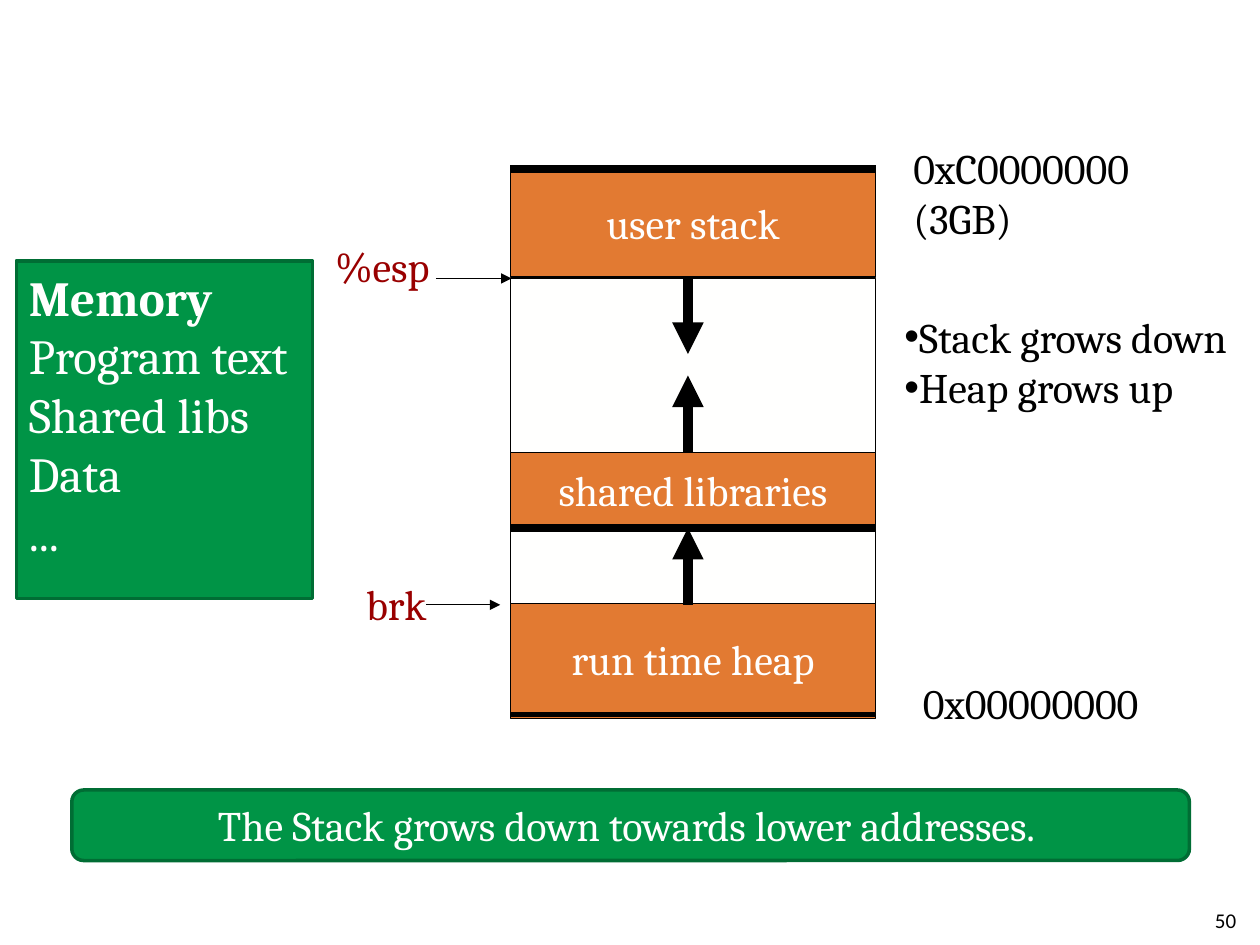
from dataclasses import dataclass

from lxml import etree
from pptx import Presentation
from pptx import util as u
from pptx.dml.color import RGBColor
from pptx.enum import shapes, text
from pptx.oxml.ns import qn

BLACK = RGBColor(0x00, 0x00, 0x00)
WHITE = RGBColor(0xFF, 0xFF, 0xFF)
OFF_WHITE = RGBColor(0xFF, 0xFF, 0xFE)
ORANGE = RGBColor(0xE2, 0x7A, 0x32)
GREEN = RGBColor(0x00, 0x94, 0x46)
DARK_GREEN = RGBColor(0x00, 0x6D, 0x34)
RED = RGBColor(0x99, 0x00, 0x00)

LEFT, CENTER, RIGHT = text.PP_ALIGN.LEFT, text.PP_ALIGN.CENTER, text.PP_ALIGN.RIGHT
TOP, MIDDLE = text.MSO_ANCHOR.TOP, text.MSO_ANCHOR.MIDDLE
RECT, ROUND = shapes.MSO_SHAPE.RECTANGLE, shapes.MSO_SHAPE.ROUNDED_RECTANGLE

# Memory column: edges and the axis of the growth arrows
COL_X, COL_W, AXIS_X = 4.05, 2.9, 5.46
STACK_TOP, STACK_END, LIBS_TOP, LIBS_END, BREAK = 1.34, 2.21, 3.59, 4.19, 4.8


@dataclass
class Box:
    x: float
    y: float
    w: float
    h: float


@dataclass
class Region:
    top: float
    height: float
    fill: RGBColor
    label: str = ""


@dataclass
class Line:
    x1: float
    y1: float
    x2: float
    y2: float
    width: float
    arrow: bool = False


@dataclass
class Label:
    box: Box
    lines: list[str]
    color: RGBColor = BLACK
    align: text.PP_ALIGN = LEFT
    anchor: text.MSO_ANCHOR = TOP
    size: float = 24
    font: str = "Cambria"
    bullet: str = ""


def write(p, words: str, size: float, color: RGBColor, align=LEFT,
          font: str = "Cambria", bold: bool = False) -> None:
    p.alignment = align
    for i, part in enumerate(words.split("\n")):
        if i:
            p.add_line_break()
        r = p.add_run()
        r.text = part
        r.font.name, r.font.size, r.font.bold = font, u.Pt(size), bold
        r.font.color.rgb = color


def paragraph(tf, index: int):
    return tf.add_paragraph() if index else tf.paragraphs[0]


def place(box: Box) -> list[u.Length]:
    return [u.Inches(v) for v in (box.x, box.y, box.w, box.h)]


def add_box(s, kind, box: Box, fill: RGBColor, line: RGBColor, width: float,
            anchor=MIDDLE, wrap: bool = False):
    sp = s.shapes.add_shape(kind, *place(box))
    sp.shadow.inherit = False
    sp.fill.solid()
    sp.fill.fore_color.rgb = fill
    sp.line.color.rgb = line
    sp.line.width = u.Pt(width)
    sp.text_frame.word_wrap = wrap
    sp.text_frame.vertical_anchor = anchor
    return sp


def add_region(s, region: Region) -> None:
    box = Box(COL_X, region.top, COL_W, region.height)
    sp = add_box(s, RECT, box, region.fill, BLACK, 0.75)
    if region.label:
        write(sp.text_frame.paragraphs[0], region.label, 24, WHITE, CENTER)


def add_line(s, line: Line) -> None:
    ends = [u.Inches(v) for v in (line.x1, line.y1, line.x2, line.y2)]
    c = s.shapes.add_connector(shapes.MSO_CONNECTOR.STRAIGHT, *ends)
    c.line.color.rgb = BLACK
    c.line.width = u.Pt(line.width)
    if line.arrow:
        etree.SubElement(c.line._get_or_add_ln(), qn("a:tailEnd"), type="triangle")
    etree.SubElement(c._element.spPr, qn("a:effectLst"))


def add_label(s, label: Label) -> None:
    tf = s.shapes.add_textbox(*place(label.box)).text_frame
    tf.word_wrap = True
    tf.vertical_anchor = label.anchor
    for i, words in enumerate(label.lines):
        p = paragraph(tf, i)
        write(p, words, label.size, label.color, label.align, label.font)
        if label.bullet:
            pPr = p._p.get_or_add_pPr()
            etree.SubElement(pPr, qn("a:buFont"), typeface="Arial")
            etree.SubElement(pPr, qn("a:buChar"), char=label.bullet)


REGIONS = [
    Region(4.75, 0.95, ORANGE, "run time heap"),
    Region(LIBS_TOP, LIBS_END - LIBS_TOP, ORANGE, "shared libraries"),
    Region(STACK_TOP, 0.86, ORANGE, "user stack"),
    Region(LIBS_END, 0.6, OFF_WHITE),
    Region(STACK_END, LIBS_TOP - STACK_END, OFF_WHITE),
]

LINES = [
    # Growth directions
    Line(AXIS_X, BREAK, AXIS_X, LIBS_END, 6, True),
    Line(AXIS_X, LIBS_TOP, AXIS_X, 2.98, 6, True),
    Line(AXIS_X, STACK_END, AXIS_X, 2.81, 6, True),
    # Pointers
    Line(3.46, STACK_END, 4.06, STACK_END, 0.75, True),
    Line(3.38, BREAK, 3.97, BREAK, 0.75, True),
    # Heavy boundaries
    Line(COL_X, 5.67, COL_X + COL_W, 5.67, 3),
    Line(COL_X, LIBS_END, COL_X + COL_W, LIBS_END, 4.5),
    Line(COL_X, STACK_TOP, COL_X + COL_W, STACK_TOP, 4.5),
]

LABELS = [
    Label(Box(7.08, 5.33, 2.2, 0.5), ["0x00000000"], align=CENTER),
    Label(Box(7.15, 1.08, 2.19, 0.91), ["0xC0000000 (3GB)"]),
    Label(Box(2.49, 1.86, 1.09, 0.5), ["%esp"], RED, CENTER),
    Label(Box(2.75, 4.54, 0.79, 0.5), ["brk"], RED, CENTER),
    Label(Box(7.08, 2.42, 3, 0.91), ["Stack grows down", "Heap grows up"], bullet="•"),
    Label(Box(7.58, 7.1, 2.33, 0.4), ["50"], align=RIGHT, anchor=MIDDLE,
          size=12, font="Calibri"),
]

MEMORY = ["Memory", "Program text\nShared libs", "Data", "..."]


def main() -> None:
    prs = Presentation()
    prs.slide_width, prs.slide_height = u.Inches(10), u.Inches(7.5)
    s = prs.slides.add_slide(prs.slide_layouts[6])

    # Address space diagram
    for region in REGIONS:
        add_region(s, region)
    for line in LINES:
        add_line(s, line)
    for label in LABELS:
        add_label(s, label)

    # Memory contents
    sp = add_box(s, RECT, Box(0.13, 2.07, 2.35, 2.68), GREEN, DARK_GREEN, 2, TOP)
    for i, words in enumerate(MEMORY):
        write(paragraph(sp.text_frame, i), words, 28, OFF_WHITE, bold=i == 0)

    # Takeaway banner
    sp = add_box(s, ROUND, Box(0.57, 6.27, 8.87, 0.56), GREEN, DARK_GREEN, 2, TOP, True)
    write(sp.text_frame.paragraphs[0],
          "The Stack grows down towards lower addresses. ", 24, OFF_WHITE, CENTER)

    prs.save("out.pptx")


if __name__ == "__main__":
    main()
